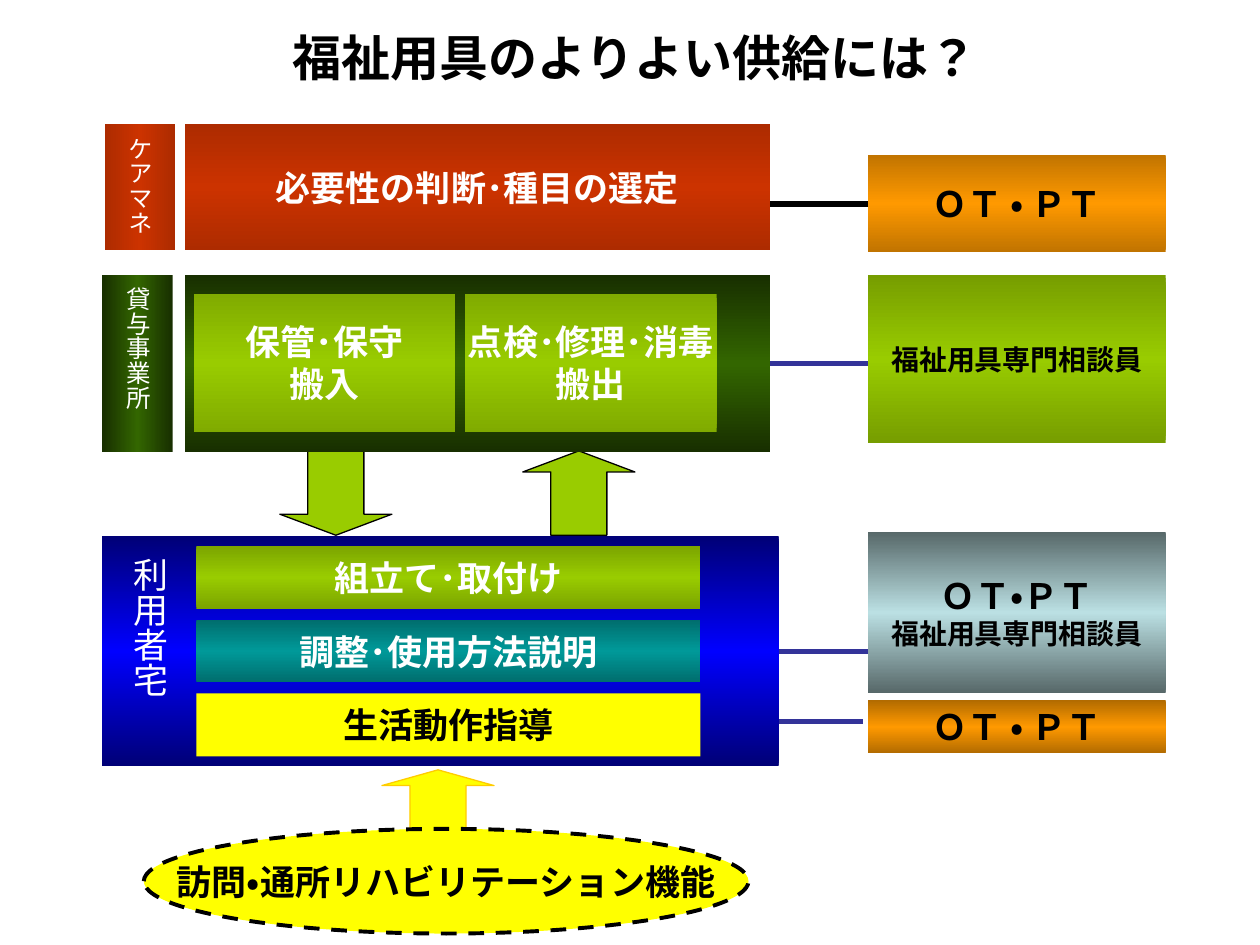
from copy import deepcopy

from pptx import Presentation
from pptx.dml.color import RGBColor
from pptx.enum.dml import MSO_LINE
from pptx.enum.lang import MSO_LANGUAGE_ID
from pptx.enum.shapes import MSO_CONNECTOR, MSO_SHAPE
from pptx.enum.text import MSO_ANCHOR, PP_ALIGN
from pptx.oxml.ns import qn
from pptx.oxml.xmlchemy import OxmlElement
from pptx.util import Cm, Pt

FONT = "League Spartan"
BLACK, WHITE, YELLOW, NAVY = "000000", "FFFFFF", "FFFF00", "333399"

# Gradients: edge colour, middle colour
RED = ("AD2B00", "CC3300")
DARK_GREEN = ("182F00", "336600")
LIME = ("80AB00", "99CC00")
BLUE = ("000076", "0000FF")

# Shared columns, rows and sizes in cm
LABEL_X, BAND_X, STAFF_X = 2.06, 3.73, 17.5
LABEL_W, BAND_W, STAFF_W = 1.42, 11.79, 6
TOP_Y, RENTAL_Y, HOME_Y = 2.51, 5.54, 10.8


def rgb(value):
    return RGBColor.from_string(value)


def paint(shape, fill, angle=90):
    """Fill with one colour, or with an edge-middle-edge gradient."""
    if isinstance(fill, str):
        shape.fill.solid()
        shape.fill.fore_color.rgb = rgb(fill)
        return
    edge, middle = fill
    shape.fill.gradient()
    shape.fill.gradient_angle = angle
    stops = shape.fill.gradient_stops
    for stop, color in zip(stops, (edge, middle)):
        stop.color.rgb = rgb(color)
    stops[0].position, stops[1].position = 0, 0.5
    gs_list = shape._element.spPr.find(".//" + qn("a:gsLst"))
    last = deepcopy(gs_list[0])
    last.set("pos", "100000")
    gs_list.append(last)


def write(shape, lines, color, bold=True, wrap=False, vertical=False,
          anchor=MSO_ANCHOR.MIDDLE):
    """Centred text; lines holds (text, size) pairs."""
    tf = shape.text_frame
    tf.word_wrap = wrap
    tf.vertical_anchor = anchor
    if vertical:
        tf._txBody.bodyPr.set("vert", "eaVert")
    for i, (text, size) in enumerate(lines):
        p = tf.add_paragraph() if i else tf.paragraphs[0]
        r = p.add_run()
        r.text = text
        r.font.language_id = MSO_LANGUAGE_ID.JAPANESE
        p.alignment = PP_ALIGN.CENTER
        p.font.name = FONT
        p.font.size = Pt(size)
        p.font.bold = bold
        p.font.color.rgb = rgb(color)


def add_block(s, kind, box, fill, angle=90, line=None, width=0.75):
    sp = s.shapes.add_shape(kind, *map(Cm, box))
    sp.shadow.inherit = False
    paint(sp, fill, angle)
    if line:
        sp.line.color.rgb = rgb(line)
        sp.line.width = Pt(width)
    else:
        sp.line.fill.background()
    return sp


def add_box(s, box, fill, lines=(), color=WHITE, wrap=False):
    sp = add_block(s, MSO_SHAPE.RECTANGLE, box, fill)
    write(sp, lines, color, wrap=wrap)


def add_label(s, box, fill, text, wrap=False):
    sp = add_block(s, MSO_SHAPE.RECTANGLE, box, fill, angle=0)
    write(sp, [(text, 14)], WHITE, bold=False, wrap=wrap, vertical=True)


def add_arrow(s, box, fill, line, rotation=0):
    sp = add_block(s, MSO_SHAPE.UP_ARROW, box, fill, line=line)
    sp.adjustments[0], sp.adjustments[1] = 0.5, 0.25
    sp.rotation = rotation


def add_link(s, x1, x2, y, color):
    line = s.shapes.add_connector(
        MSO_CONNECTOR.STRAIGHT, Cm(x1), Cm(y), Cm(x2), Cm(y))
    line.line.color.rgb = rgb(color)
    line.line.width = Pt(3)
    line._element.spPr.append(OxmlElement("a:effectLst"))


def add_text(s, box, text, size, color, **options):
    tb = s.shapes.add_textbox(*map(Cm, box))
    write(tb, [(text, size)], color, wrap=True, anchor=MSO_ANCHOR.TOP, **options)


def main():
    prs = Presentation()
    prs.slide_width, prs.slide_height = Cm(25.4), Cm(19.05)
    s = prs.slides.add_slide(prs.slide_layouts[6])

    # Title
    add_text(s, (3.58, 0.43, 18.44, 1.45), "福祉用具のよりよい供給には？", 28, BLACK)

    # Links from the steps to the staff, behind the boxes
    for x1, x2, y, color in [
        (13.89, 18.03, 4.11, BLACK),
        (14.3, 19, 7.33, NAVY),
        (12.8, 17.5, 13.13, NAVY),
        (12.7, 17.4, 14.55, NAVY),
    ]:
        add_link(s, x1, x2, y, color)

    # Staff in charge
    expert = ("福祉用具専門相談員", 16)
    therapists = ("ＯＴ ・ ＰＴ", 20)
    for y, h, fill, lines in [
        (3.12, 1.96, ("C17400", "FF9900"), [therapists]),
        (RENTAL_Y, 3.4, ("769D00", "99CC00"), [expert]),
        (10.72, 3.25, ("576869", "BBE0E3"), [("ＯＴ・ＰＴ", 20), expert]),
        (14.12, 1.07, ("B26B00", "FF9900"), [therapists]),
    ]:
        add_box(s, (STAFF_X, y, STAFF_W, h), fill, lines, BLACK)

    # Arrows between the levels
    add_arrow(s, (7.7, 15.52, 2.26, 1.27), YELLOW, "FFCC00")
    add_arrow(s, (5.64, 9.09, 2.26, 1.7), "99CC00", BLACK, rotation=180)
    add_arrow(s, (10.54, 9.09, 2.26, 1.7), "99CC00", BLACK)

    # Rehabilitation services
    oval = add_block(s, MSO_SHAPE.OVAL, (2.9, 16.71, 12.19, 2.11), YELLOW,
                     line=BLACK, width=2.25)
    oval.line.dash_style = MSO_LINE.DASH
    write(oval, [("訪問・通所リハビリテーション機能", 20)], BLACK)

    # Care manager
    add_label(s, (2.11, TOP_Y, LABEL_W, 2.54), RED, "ケアマネ")
    add_box(s, (BAND_X, TOP_Y, BAND_W, 2.54), RED, [("必要性の判断･種目の選定", 20)])

    # Rental company
    add_label(s, (LABEL_X, RENTAL_Y, LABEL_W, 3.58), DARK_GREEN, "貸与事業所", wrap=True)
    add_box(s, (BAND_X, RENTAL_Y, BAND_W, 3.58), DARK_GREEN)
    for x, w, texts in [
        (3.91, 5.26, ("保管･保守", "搬入")),
        (9.37, 5.08, ("点検･修理･消毒", "搬出")),
    ]:
        add_box(s, (x, 5.92, w, 2.79), LIME, [(text, 20) for text in texts])

    # User's home
    add_box(s, (LABEL_X, HOME_Y, 13.64, 4.65), BLUE)
    add_text(s, (2.21, 11, 1.35, 4.24), "利用者宅", 20, WHITE, bold=False, vertical=True)
    for i, (text, fill, color) in enumerate([
        ("組立て･取付け", ("7BA400", "99CC00"), WHITE),
        ("調整･使用方法説明", ("006D6D", "009999"), WHITE),
        ("生活動作指導", YELLOW, BLACK),
    ]):
        add_box(s, (3.96, 11 + 1.49 * i, 10.16, 1.27), fill, [(text, 20)], color)

    prs.save("out.pptx")


if __name__ == "__main__":
    main()
